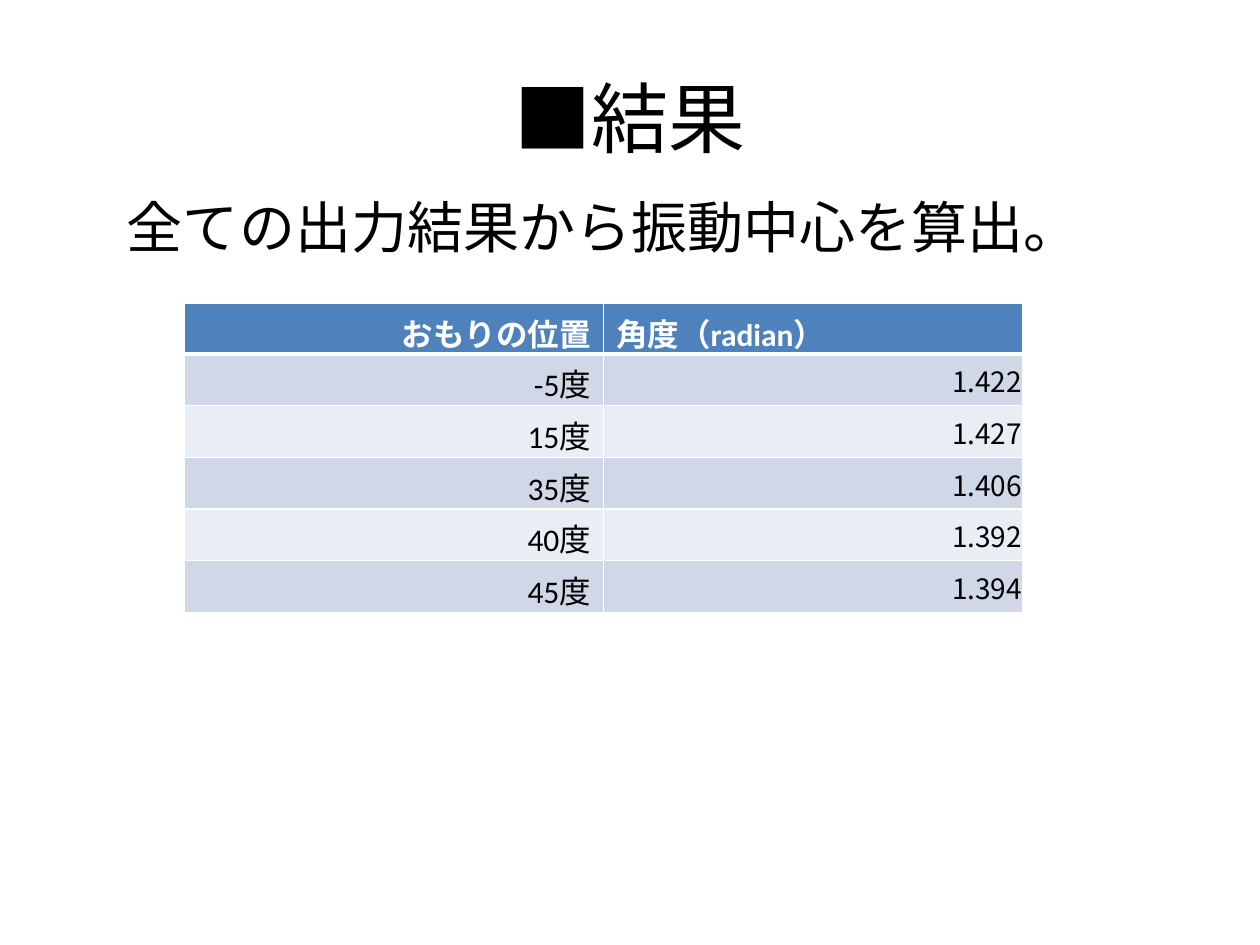
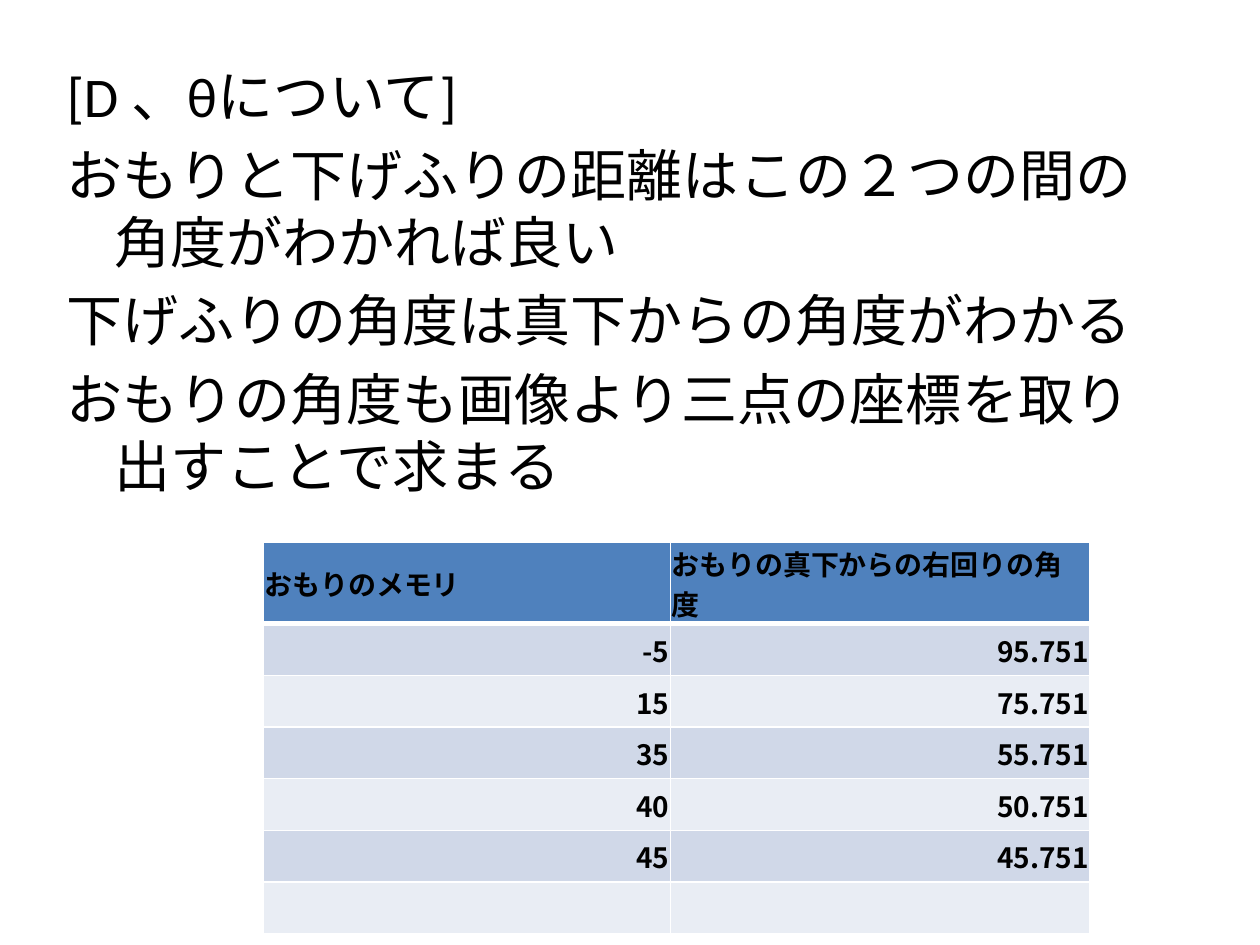
"""Build two slides giving the pendulum results and the weight angles as tables."""
from lxml import etree
from pptx import Presentation
from pptx.dml.color import RGBColor
from pptx.enum.lang import MSO_LANGUAGE_ID
from pptx.enum.text import MSO_ANCHOR, MSO_AUTO_SIZE, PP_ALIGN
from pptx.oxml.ns import qn
from pptx.util import Inches, Pt

LEFT, CENTER, RIGHT = PP_ALIGN.LEFT, PP_ALIGN.CENTER, PP_ALIGN.RIGHT
TOP, MIDDLE = MSO_ANCHOR.TOP, MSO_ANCHOR.MIDDLE
NO_FIT = MSO_AUTO_SIZE.NONE
JAPANESE = MSO_LANGUAGE_ID.JAPANESE
LATIN, CJK = "Calibri", "Noto Sans CJK JP"
BLACK, WHITE, HEADER = "000000", "FFFFFF", "4F81BD"
BANDS = ["E9EDF4", "D0D8E8"]


def format_text(tf, size, font=LATIN, color=BLACK, bold=False, align=LEFT):
    for p in tf.paragraphs:
        p.alignment = align
        for r in p.runs:
            r.font.size = Pt(size)
            r.font.bold = bold
            r.font.language_id = JAPANESE
            r.font.color.rgb = RGBColor.from_string(color)
            r.font.name = font
            etree.SubElement(r.font._element, qn("a:ea"), typeface=CJK)


def add_grid(s, left, top, widths, heights, rows):
    shape = s.shapes.add_table(len(rows), len(widths), Inches(left), Inches(top),
                               Inches(sum(widths)), Inches(sum(heights)))
    table = shape.table
    for column, width in zip(table.columns, widths):
        column.width = Inches(width)
    for i, (row, height) in enumerate(zip(rows, heights)):
        table.rows[i].height = Inches(height)
        for cell, text in zip(table.rows[i].cells, row):
            tcPr = cell._tc.get_or_add_tcPr()
            for side in "LRTB":
                weight = 3 if (i == 0 and side == "B") or (i == 1 and side == "T") else 1
                ln = etree.SubElement(tcPr, qn(f"a:ln{side}"), w=str(Pt(weight)))
                fill = etree.SubElement(ln, qn("a:solidFill"))
                etree.SubElement(fill, qn("a:srgbClr"), val=WHITE)
            cell.fill.solid()
            cell.fill.fore_color.rgb = RGBColor.from_string(BANDS[i % 2] if i else HEADER)
            cell.text_frame.text = text
    return table


prs = Presentation()
prs.slide_width, prs.slide_height = Inches(10), Inches(7.5)

s = prs.slides.add_slide(prs.slide_layouts[5])
title = s.shapes.title
title.left, title.top, title.width, title.height = map(Inches, (0.5, 0.3, 9, 1.25))
tf = title.text_frame
tf.text = "■結果"
tf.vertical_anchor = MIDDLE
format_text(tf, 44, align=CENTER)

tf = s.shapes.add_textbox(Inches(0.91), Inches(1.48), Inches(8.94), Inches(3.74)).text_frame
tf.word_wrap = True
tf.text = "全ての出力結果から振動中心を算出。"
format_text(tf, 32)

positions = ["-5", "15", "35", "40", "45"]
radians = ["1.422", "1.427", "1.406", "1.392", "1.394"]
rows = [("おもりの位置", "角度（radian）")]
rows += [(f"{position}度", radian) for position, radian in zip(positions, radians)]
result_table = add_grid(s, 1.46, 2.41, [3.33, 3.33], [0.39] + [0.41] * 5, rows)
for i, row in enumerate(result_table.rows):
    position_cell, radian_cell = row.cells
    color = BLACK if i else WHITE
    format_text(position_cell.text_frame, 18, color=color, bold=i == 0, align=RIGHT)
    if i == 0:
        format_text(radian_cell.text_frame, 18, color=color, bold=True)
        continue
    radian_cell.vertical_anchor = MIDDLE
    radian_cell.margin_left = radian_cell.margin_top = radian_cell.margin_right = Inches(0.01)
    radian_cell.margin_bottom = 0
    format_text(radian_cell.text_frame, 16, CJK, align=RIGHT)

s = prs.slides.add_slide(prs.slide_layouts[1])
title = s.shapes.title
title._element.getparent().remove(title._element)
body = s.placeholders[1]
body.left, body.top, body.width, body.height = map(Inches, (0.43, 0.44, 9, 6.26))
tf = body.text_frame
tf.text = "\n".join([
    "[D 、θについて]",
    "おもりと下げふりの距離はこの２つの間の角度がわかれば良い",
    "下げふりの角度は真下からの角度がわかる",
    "おもりの角度も画像より三点の座標を取り出すことで求まる",
])
tf.auto_size = NO_FIT
tf.vertical_anchor = TOP
format_text(tf, 32)
for p in tf.paragraphs:
    etree.SubElement(p._p.get_or_add_pPr(), qn("a:buNone"))

angles = ["95.751", "75.751", "55.751", "50.751", "45.751"]
rows = [("おもりのメモリ", "おもりの真下からの右回りの角度"), *zip(positions, angles), ("", "")]
angle_table = add_grid(s, 2.09, 4.3, [3.23, 3.33], [0.41] * 7, rows)
for i, row in enumerate(angle_table.rows):
    for cell in row.cells:
        cell.vertical_anchor = MIDDLE
        cell.margin_left = cell.margin_top = cell.margin_right = Inches(0.01)
        cell.margin_bottom = 0
        format_text(cell.text_frame, 16, CJK, bold=True, align=RIGHT if i else LEFT)

prs.save("out.pptx")
